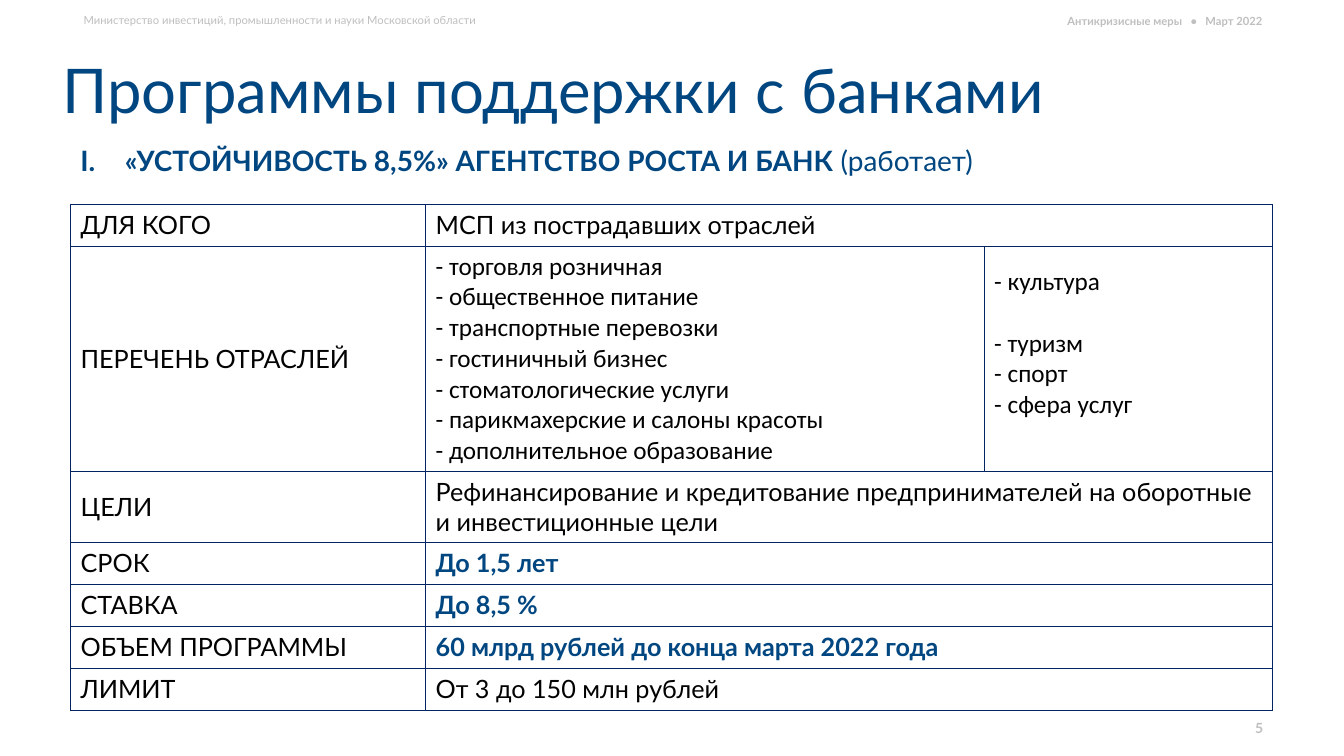
from lxml import etree
from pptx import Presentation
from pptx import util as u
from pptx.dml.color import RGBColor
from pptx.enum import text as t
from pptx.oxml.ns import qn

Pt = u.Pt
NAVY = RGBColor(0x00, 0x46, 0x80)
INK = RGBColor(0x02, 0x02, 0x02)
GREY = RGBColor(0xBF, 0xBF, 0xBF)
EDGE = RGBColor(0x02, 0x24, 0x63)

HEAD = dict(size=Pt(8), name="Lato", color=GREY)
BOLD = dict(HEAD, bold=True)
PAGE = dict(BOLD, size=Pt(10))
TITLE = dict(size=Pt(44), name="Lato", color=NAVY, bold=False)
LEAD = dict(size=Pt(20), name="Lato", color=NAVY, bold=True)
BODY = dict(size=Pt(18), name="Lato", color=INK, bold=False)
LIST = dict(BODY, name="Calibri")
KEY = dict(BODY, color=NAVY, bold=True)

COLS = [253.6, 399, 206.2]
GOODS = [
    "- торговля розничная",
    "- общественное питание",
    "- транспортные перевозки",
    "- гостиничный бизнес",
    "- стоматологические услуги",
    "- парикмахерские и салоны красоты",
    "- дополнительное образование",
]
OTHER = ["- культура", "- туризм", "- спорт", "- сфера услуг"]
ROWS = [
    (30, "ДЛЯ КОГО", ["МСП из пострадавших отраслей"], BODY),
    (161, "ПЕРЕЧЕНЬ ОТРАСЛЕЙ", GOODS, LIST),
    (50, "ЦЕЛИ", ["Рефинансирование и кредитование предпринимателей "
                  "на оборотные и инвестиционные цели"], BODY),
    (30, "СРОК", ["До 1,5 лет"], KEY),
    (30, "СТАВКА", ["До 8,5 %"], KEY),
    (30, "ОБЪЕМ ПРОГРАММЫ", ["60 млрд рублей до конца марта 2022 года"], KEY),
    (30, "ЛИМИТ", ["От 3 до 150 млн рублей"], BODY),
]


def style(font, form):
    """Set font attributes from a dict."""
    for key, val in form.items():
        if key == "color":
            font.color.rgb = val
        else:
            setattr(font, key, val)


def add_run(par, words, form):
    """Add one formatted run."""
    run = par.add_run()
    run.text = words
    style(run.font, form)


def add_text(slide, box, words, form, align=t.PP_ALIGN.LEFT,
             anchor=t.MSO_ANCHOR.MIDDLE):
    """Add a wrapped text box and return its paragraph."""
    frame = slide.shapes.add_textbox(*map(Pt, box)).text_frame
    frame.word_wrap = True
    frame.vertical_anchor = anchor
    par = frame.paragraphs[0]
    par.alignment = align
    add_run(par, words, form)
    return par


def set_tabs(par, stops):
    """Add left tab stops to a paragraph."""
    tabs = etree.SubElement(par._p.get_or_add_pPr(), qn("a:tabLst"))
    for stop in stops:
        etree.SubElement(tabs, qn("a:tab"), pos=str(Pt(stop)), algn="l")


def set_roman(par, dent):
    """Number a paragraph with a hanging Roman numeral."""
    props = par._p.get_or_add_pPr()
    props.set("marL", str(Pt(dent)))
    props.set("indent", str(-Pt(dent)))
    etree.SubElement(props, qn("a:buFont"), typeface="+mj-lt")
    etree.SubElement(props, qn("a:buAutoNum"), type="romanUcPeriod")


def add_title(slide, words):
    """Place and format the title."""
    shape = slide.shapes.title
    shape.left, shape.top, shape.width, shape.height = map(
        Pt, (37.4, 26, 859.7, 81.4))
    frame = shape.text_frame
    frame.vertical_anchor = t.MSO_ANCHOR.MIDDLE
    par = frame.paragraphs[0]
    par.alignment = t.PP_ALIGN.LEFT
    par.line_spacing = 0.9
    add_run(par, words, TITLE)


def set_edges(cell):
    """Draw thin lines around a cell and clear its fill."""
    props = cell._tc.get_or_add_tcPr()
    for side in ("lnL", "lnR", "lnT", "lnB"):
        line = etree.SubElement(props, qn("a:" + side), w=str(Pt(0.5)))
        fill = etree.SubElement(line, qn("a:solidFill"))
        etree.SubElement(fill, qn("a:srgbClr"), val=str(EDGE))
    cell.fill.background()


def fill_cell(cell, lines, form):
    """Write one paragraph per line into a cell."""
    cell.vertical_anchor = t.MSO_ANCHOR.MIDDLE
    frame = cell.text_frame
    for num, words in enumerate(lines):
        par = frame.add_paragraph() if num else frame.paragraphs[0]
        add_run(par, words, form)


def add_grid(slide):
    """Build the table of programme terms."""
    high = sum(row[0] for row in ROWS)
    box = map(Pt, (50.4, 145.8, sum(COLS), high))
    grid = slide.shapes.add_table(len(ROWS), len(COLS), *box).table
    grid.first_row = grid.horz_banding = False
    for col, wide in zip(grid.columns, COLS):
        col.width = Pt(wide)
    for num, (tall, label, lines, form) in enumerate(ROWS):
        grid.rows[num].height = Pt(tall)
        cells = [grid.cell(num, col) for col in range(len(COLS))]
        for cell in cells:
            set_edges(cell)
        fill_cell(cells[0], [label], BODY)
        fill_cell(cells[1], lines, form)
        if lines is GOODS:
            fill_cell(cells[2], OTHER, LIST)
            cells[2].margin_bottom = Pt(25.6)
            cells[2].text_frame.paragraphs[1].space_before = Pt(22)
        else:
            cells[1].merge(cells[2])


def main():
    """Build and save the slide."""
    deck = Presentation()
    deck.slide_width, deck.slide_height = Pt(960), Pt(540)
    slide = deck.slides.add_slide(deck.slide_layouts[5])
    add_text(slide, (52.6, 5.8, 406.8, 17.3),
             "Министерство инвестиций, промышленности и науки Московской области",
             HEAD, anchor=t.MSO_ANCHOR.TOP)
    add_title(slide, "Программы поддержки с банками")
    add_text(slide, (693.4, 511.2, 216, 18), "5", PAGE, t.PP_ALIGN.RIGHT)
    date = add_text(slide, (755.4, 8.6, 154, 13),
                    "Антикризисные меры\t•\tМарт 2022", BOLD)
    set_tabs(date, (88, 98.5))
    lead = add_text(slide, (50.4, 97.2, 833, 37.4),
                    "«УСТОЙЧИВОСТЬ 8,5%» АГЕНТСТВО РОСТА И БАНК ", LEAD)
    lead.line_spacing = 0.9
    set_roman(lead, 31.7)
    add_run(lead, "(работает)", dict(LEAD, bold=False))
    add_grid(slide)
    deck.save("out.pptx")


if __name__ == "__main__":
    main()
